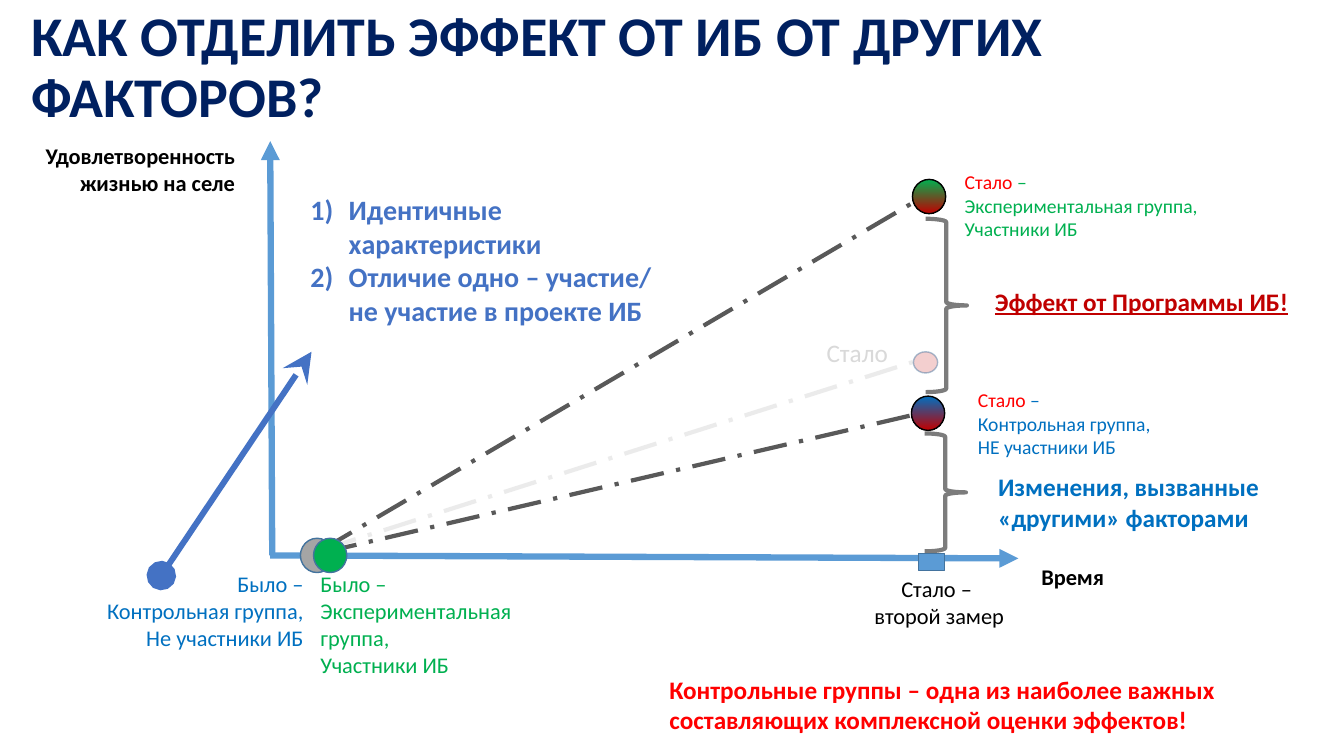
from pptx import Presentation
from pptx.dml.color import RGBColor
from pptx.enum.dml import MSO_LINE
from pptx.enum.shapes import MSO_CONNECTOR, MSO_SHAPE
from pptx.enum.text import MSO_ANCHOR, MSO_AUTO_SIZE, PP_ALIGN
from pptx.oxml.ns import qn
from pptx.util import Inches, Pt
from lxml.etree import SubElement

THEME = {
    "font": "Calibri",
    "navy": "002060", "blue": "0070C0", "green": "00B050", "red": "FF0000",
    "dark_red": "C00000", "black": "000000", "axis": "5B9BD5", "accent": "4472C4",
    "outline": "43739E", "brace": "7C7C7C", "trend": "595959", "faded": "BFBFBF",
    "pale": "D9D9D9", "gray": "A5A5A5",
    "title": 40, "list": 20, "callout": 18, "label": 16, "group": 14,
}
LEFT, CENTER, RIGHT = PP_ALIGN.LEFT, PP_ALIGN.CENTER, PP_ALIGN.RIGHT

# Content
TITLE = "КАК ОТДЕЛИТЬ ЭФФЕКТ ОТ ИБ ОТ ДРУГИХ ФАКТОРОВ?"
CONDITIONS = ["Идентичные характеристики", "Отличие одно – участие/ не участие в проекте ИБ"]

# Box, paragraphs, size, colour, bold, alignment
LABELS = [
    ((10.23, 5.54, 1.62, 0.37), ["Время"], "label", "black", True, LEFT),
    ((-0.11, 1.36, 2.54, 0.64), ["Удовлетворенность жизнью на селе"],
     "label", "black", True, RIGHT),
    ((0.51, 5.61, 2.6, 0.91), ["Было –", "Контрольная группа,", "Не участники ИБ"],
     "label", "blue", False, RIGHT),
    ((3.08, 5.61, 2.8, 1.18), ["Было –", "Экспериментальная группа,", "Участники ИБ"],
     "label", "green", False, LEFT),
    ((8.4, 5.66, 1.83, 0.64), ["Стало – ", "второй замер"], "label", "black", False, CENTER),
    ((8.1, 3.3, 0.97, 0.4), ["Стало"], "callout", "pale", False, LEFT),
    ((9.8, 4.63, 3.21, 0.71), ["Изменения, вызванные «другими» факторами"],
     "callout", "blue", True, LEFT),
    ((6.54, 6.64, 6.52, 0.71),
     ["Контрольные группы – одна из наиболее важных составляющих комплексной оценки эффектов!"],
     "callout", "red", True, LEFT),
]
# Box, later lines, colour
OUTCOMES = [
    ((9.47, 1.64, 3.24, 0.81), ["Экспериментальная группа,", "Участники ИБ"], "green"),
    ((9.6, 3.8, 3.24, 0.81), ["Контрольная группа,", "НЕ участники ИБ"], "blue"),
]
# Start, end, colour, opacity in percent
TRENDS = [
    ((3.2, 5.45), (9.21, 1.92), "trend", 100),
    ((3.21, 5.48), (9.17, 4.09), "trend", 100),
    ((3.21, 5.45), (9.06, 3.59), "faded", 29),
]
AXES = [((2.68, 5.51), (10.1, 5.54)), ((2.7, 5.51), (2.68, 1.4))]
BRACES = [(9.17, 4.3, 0.41, 1.17), (9.18, 2.17, 0.41, 1.72)]
DOT = (0.33, 0.34)
# Shape, box, fill colours, line colour, fill opacity, line opacity
MARKERS = [
    (MSO_SHAPE.OVAL, (2.98, 5.34, *DOT), ["gray"], "outline", 100, 100),
    (MSO_SHAPE.OVAL, (3.11, 5.34, *DOT), ["green"], "outline", 100, 100),
    (MSO_SHAPE.OVAL, (9.06, 3.49, 0.24, 0.21), ["dark_red"], "outline", 19, 45),
    (MSO_SHAPE.OVAL, (9.05, 1.78, *DOT), ["green", "dark_red"], "black", 100, 100),
    (MSO_SHAPE.OVAL, (9.04, 3.93, *DOT), ["blue", "dark_red"], "black", 100, 100),
    (MSO_SHAPE.RECTANGLE, (9.11, 5.49, 0.26, 0.17), ["axis"], "outline", 100, 100),
]


def color(name):
    return RGBColor.from_string(THEME[name])


def inches(values):
    return [Inches(value) for value in values]


def set_opacity(properties, percent):
    if percent < 100:
        solid_color = properties.find(qn("a:solidFill"))[0]
        SubElement(solid_color, qn("a:alpha"), val=str(percent * 1000))


def style_run(run, size, color_name, bold=False):
    run.font.name = THEME["font"]
    run.font.size = Pt(THEME[size])
    run.font.bold = bold
    run.font.color.rgb = color(color_name)


def add_label(slide, box, lines, size, color_name, bold=False, alignment=LEFT):
    text_frame = slide.shapes.add_textbox(*inches(box)).text_frame
    text_frame.word_wrap = True
    text_frame.auto_size = MSO_AUTO_SIZE.SHAPE_TO_FIT_TEXT
    text_frame.text = "\n".join(lines)
    for paragraph in text_frame.paragraphs:
        paragraph.alignment = alignment
        for run in paragraph.runs:
            style_run(run, size, color_name, bold)
    return text_frame


def add_line(slide, start, end, color_name, width, opacity=100, dash=None, ends=()):
    line = slide.shapes.add_connector(MSO_CONNECTOR.STRAIGHT, *inches(start + end))
    line.line.color.rgb = color(color_name)
    line.line.width = Pt(width)
    if dash:
        line.line.dash_style = dash
    properties = line._element.spPr
    outline = properties.find(qn("a:ln"))
    set_opacity(outline, opacity)
    for tag, kind, size in ends:
        SubElement(outline, qn(tag), type=kind, w=size, len=size)
    SubElement(properties, qn("a:effectLst"))


def add_marker(slide, kind, box, fills, line_color, fill_opacity, line_opacity):
    marker = slide.shapes.add_shape(kind, *inches(box))
    marker.shadow.inherit = False
    if len(fills) > 1:
        marker.fill.gradient()
        marker.fill.gradient_angle = 270
        for stop, name in zip(marker.fill.gradient_stops, fills):
            stop.color.rgb = color(name)
    else:
        marker.fill.solid()
        marker.fill.fore_color.rgb = color(fills[0])
        set_opacity(marker._element.spPr, fill_opacity)
    marker.line.color.rgb = color(line_color)
    marker.line.width = Pt(1)
    set_opacity(marker._element.spPr.find(qn("a:ln")), line_opacity)


def main():
    presentation = Presentation()
    presentation.slide_width, presentation.slide_height = Inches(13.33), Inches(7.5)
    slide = presentation.slides.add_slide(presentation.slide_layouts[5])

    # Title
    title = slide.shapes.title
    title.left, title.top, title.width, title.height = inches((0.21, 0.23, 13.24, 0.91))
    title.text_frame.text = TITLE
    title.text_frame.word_wrap = True
    title.text_frame.auto_size = MSO_AUTO_SIZE.NONE
    title.text_frame.vertical_anchor = MSO_ANCHOR.MIDDLE
    heading = title.text_frame.paragraphs[0]
    heading.alignment = LEFT
    heading.line_spacing = 0.9
    style_run(heading.runs[0], "title", "navy", True)

    # Trend lines and axes
    for start, end, name, opacity in TRENDS:
        add_line(slide, start, end, name, 3, opacity, MSO_LINE.LONG_DASH_DOT)
    for start, end in AXES:
        add_line(slide, start, end, "axis", 4.5, ends=[("a:tailEnd", "triangle", "med")])

    # Braces and measurement points
    for box in BRACES:
        brace = slide.shapes.add_shape(MSO_SHAPE.RIGHT_BRACE, *inches(box))
        brace.shadow.inherit = False
        brace.fill.background()
        brace.line.color.rgb = color("brace")
        brace.line.width = Pt(3)
    for marker in MARKERS:
        add_marker(slide, *marker)

    # Labels
    for label in LABELS:
        add_label(slide, *label)
    for box, lines, name in OUTCOMES:
        text_frame = add_label(slide, box, ["Стало ", *lines], "group", name)
        first = text_frame.paragraphs[0]
        first.runs[0].font.color.rgb = color("red")
        dash = first.add_run()
        dash.text = "–"
        style_run(dash, "group", name)
    effect = add_label(slide, (9.77, 2.79, 3.45, 0.4), ["Эффект от Программы ИБ!"],
                       "callout", "dark_red", True)
    effect.paragraphs[0].runs[0].font.underline = True

    # Numbered conditions and their pointer
    conditions = add_label(slide, (2.98, 1.86, 3.8, 1.45), CONDITIONS, "list", "accent", True)
    for paragraph in conditions.paragraphs:
        properties = paragraph._p.get_or_add_pPr()
        properties.set("marL", str(Inches(0.38)))
        properties.set("indent", str(-Inches(0.38)))
        SubElement(properties, qn("a:buFont"), typeface=THEME["font"])
        SubElement(properties, qn("a:buAutoNum"), type="arabicParenR")
    add_line(slide, (1.6, 5.71), (3.09, 3.49), "accent", 4.25,
             ends=[("a:headEnd", "oval", "lg"), ("a:tailEnd", "stealth", "lg")])

    presentation.save("out.pptx")


if __name__ == "__main__":
    main()
